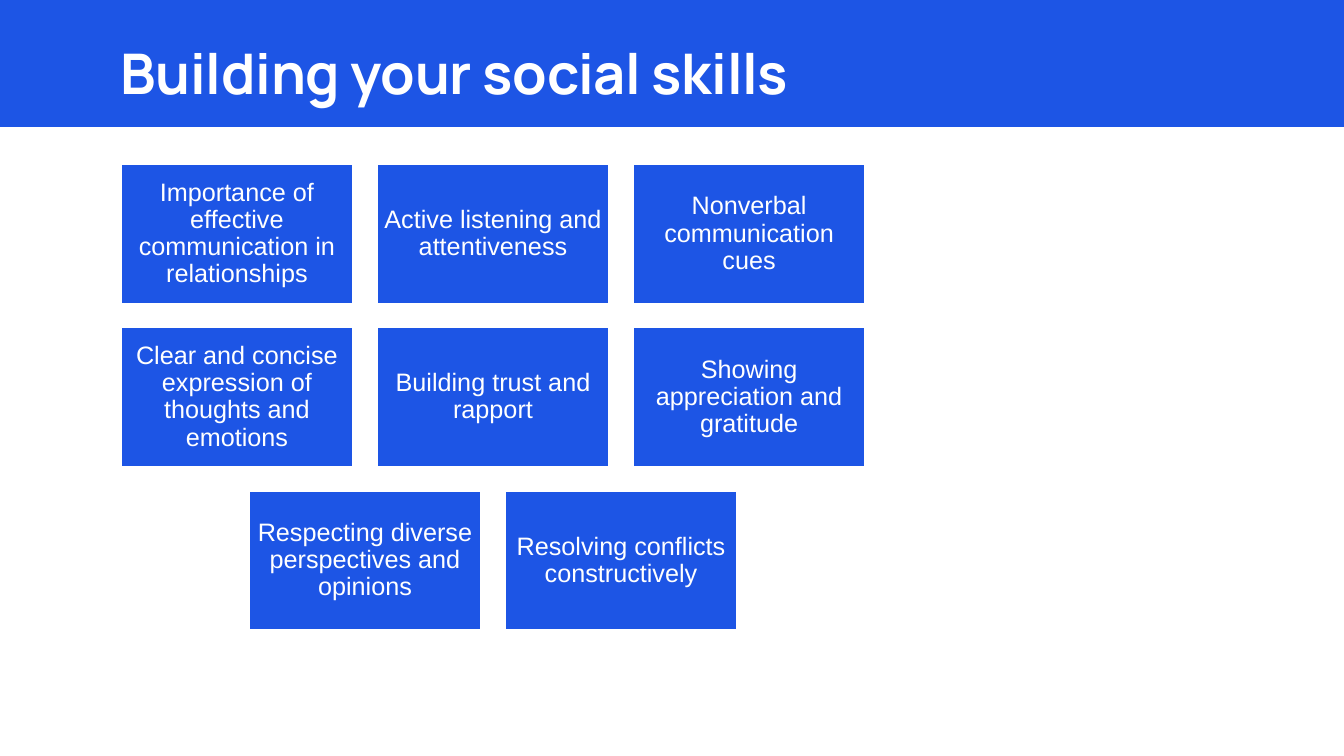
from pptx import Presentation
from pptx.dml.color import RGBColor
from pptx.enum.shapes import MSO_SHAPE
from pptx.enum.text import MSO_ANCHOR, PP_ALIGN
from pptx.util import Inches, Pt

COLORS = {"blue": "1D55E5", "white": "FFFFFF"}
SLIDE_WIDTH, SLIDE_HEIGHT = 13.33, 7.5
CARD_WIDTH, CARD_HEIGHT = 2.3, 1.38
CARD_GAP = 0.24
COLUMN_STEP, ROW_STEP = CARD_WIDTH + CARD_GAP, CARD_HEIGHT + CARD_GAP
GRID_LEFT, GRID_TOP = 1.2, 1.63
SKILL_ROWS = [
    [
        "Importance of effective communication in relationships",
        "Active listening and attentiveness",
        "Nonverbal communication cues",
    ],
    [
        "Clear and concise expression of thoughts and emotions",
        "Building trust and rapport",
        "Showing appreciation and gratitude",
    ],
    [
        "Respecting diverse perspectives and opinions",
        "Resolving conflicts constructively",
    ],
]


class SlideBuilder:
    title_font = "Manrope"
    body_font = "Arial"

    def __init__(self, slide):
        self.slide = slide

    def color(self, name):
        return RGBColor.from_string(COLORS[name])

    def rectangle(self, left, top, width, height):
        shape = self.slide.shapes.add_shape(
            MSO_SHAPE.RECTANGLE, Inches(left), Inches(top), Inches(width), Inches(height)
        )
        shape.shadow.inherit = False
        shape.fill.solid()
        shape.fill.fore_color.rgb = self.color("blue")
        shape.line.fill.background()
        return shape

    def set_text(self, shape, text, font_name, size, bold=False):
        frame = shape.text_frame
        frame.text = text
        frame.word_wrap = True
        frame.vertical_anchor = MSO_ANCHOR.MIDDLE
        paragraph = frame.paragraphs[0]
        font = paragraph.runs[0].font
        font.name = font_name
        font.size = Pt(size)
        font.bold = bold
        font.color.rgb = self.color("white")
        return paragraph

    def title(self, text, left, top, width, height):
        box = self.slide.shapes.add_textbox(
            Inches(left), Inches(top), Inches(width), Inches(height)
        )
        paragraph = self.set_text(box, text, self.title_font, 40, bold=True)
        paragraph.runs[0]._r.get_or_add_rPr().set("spc", "-20")

    def card(self, text, left, top):
        shape = self.rectangle(left, top, CARD_WIDTH, CARD_HEIGHT)
        shape.line.color.rgb = self.color("white")
        shape.line.width = Pt(1)
        frame = shape.text_frame
        frame.margin_left = frame.margin_right = Inches(0.07)
        frame.margin_top = frame.margin_bottom = Inches(0.07)
        paragraph = self.set_text(shape, text, self.body_font, 18)
        paragraph.alignment = PP_ALIGN.CENTER
        paragraph.line_spacing = 0.9


def main():
    presentation = Presentation()
    presentation.slide_width = Inches(SLIDE_WIDTH)
    presentation.slide_height = Inches(SLIDE_HEIGHT)
    builder = SlideBuilder(presentation.slides.add_slide(presentation.slide_layouts[6]))

    builder.rectangle(0, 0, SLIDE_WIDTH, 1.26)
    builder.title("Building your social skills", 1.1, 0.3, 8.03, 0.84)

    columns = len(SKILL_ROWS[0])
    for row, skills in enumerate(SKILL_ROWS):
        row_left = GRID_LEFT + (columns - len(skills)) * COLUMN_STEP / 2
        for column, skill in enumerate(skills):
            builder.card(skill, row_left + column * COLUMN_STEP, GRID_TOP + row * ROW_STEP)

    presentation.save("out.pptx")


if __name__ == "__main__":
    main()
